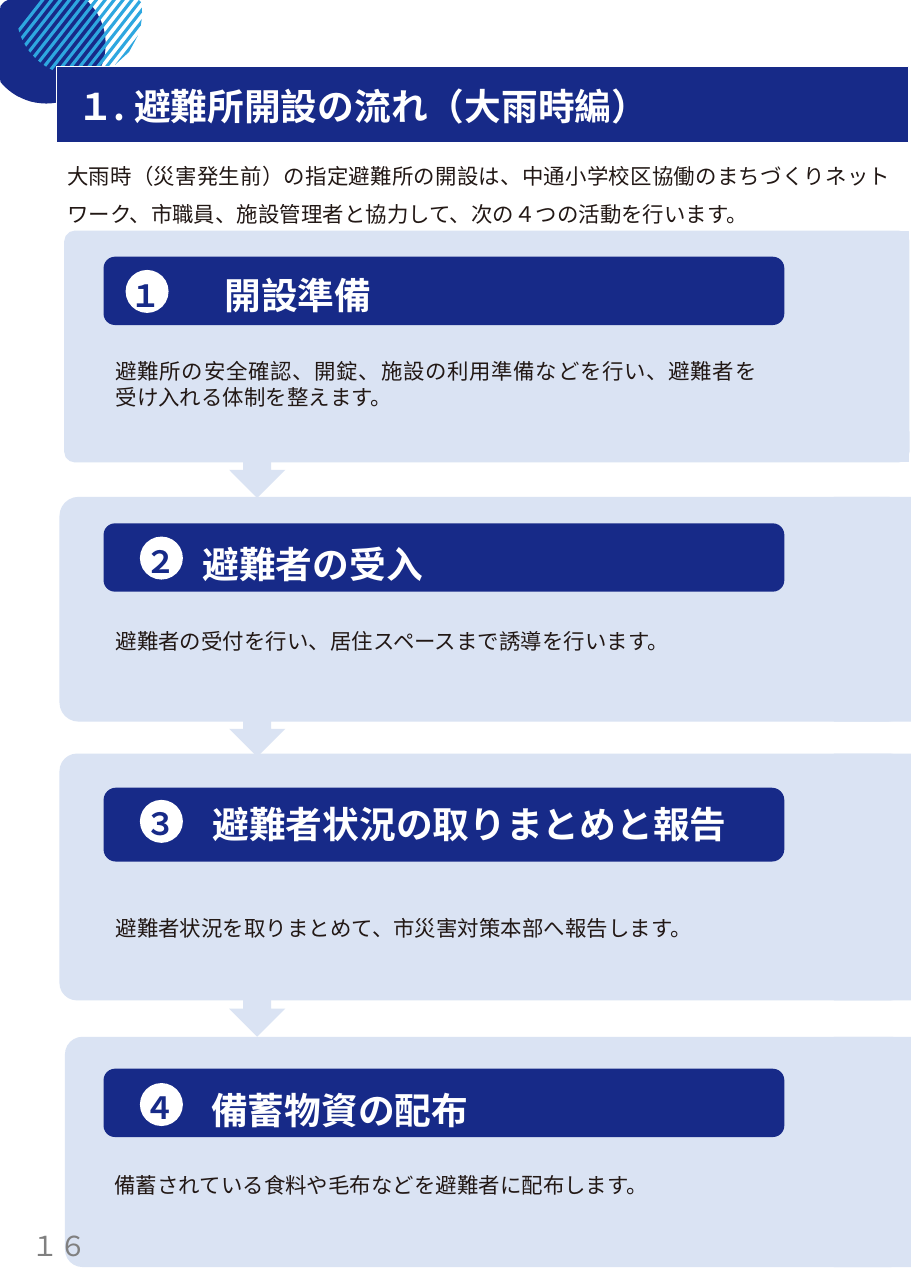
from math import cos, pi, sin, sqrt

from lxml.etree import SubElement
from pptx import Presentation
from pptx.dml.color import RGBColor
from pptx.enum.shapes import MSO_SHAPE as Form
from pptx.enum.text import PP_ALIGN as Align
from pptx.oxml.ns import qn
from pptx.util import Inches, Pt

COLORS = {"navy": "172A88", "pale": "DAE3F3", "sky": "2EA7E0",
          "white": "FFFFFF", "ink": "221815", "gray": "808080"}
SANS = "Noto Sans CJK JP"
SERIF = "Cambria"
UNITS = 1000  # freeform units per inch

# panel: left, top, width, height, corner; bar: top, height;
# badge: left, top; digit: left, top; head: left, top, width;
# body: left, top, width, height
STEPS = [
    dict(panel=(0.59, 2.1, 7.66, 2.09, 0.043), bar=(2.33, 0.62),
         badge=(1.14, 2.45), digit=(1.09, 2.46, "１"),
         head=(1.94, 2.43, 1.92, "開設準備"),
         body=(0.97, 3.24, 5.9, 0.49,
               "避難所の安全確認、開錠、施設の利用準備などを行い、"
               "避難者を受け入れる体制を整えます。")),
    dict(panel=(0.54, 4.51, 7.7, 2.04, 0.085), bar=(4.75, 0.62),
         badge=(1.27, 4.87), digit=(1.22, 4.88, "２"),
         head=(1.74, 4.87, 2.28, "避難者の受入"),
         body=(0.97, 5.69, 5.77, 0.25,
               "避難者の受付を行い、居住スペースまで誘導を行います。")),
    dict(panel=(0.54, 6.84, 7.7, 2.24, 0.071), bar=(7.15, 0.67),
         badge=(1.27, 7.26), digit=(1.22, 7.26, "３"),
         head=(1.83, 7.35, 4.91, "避難者状況の取りまとめと報告"), lead=Pt(20),
         body=(0.97, 8.3, 5.9, 0.25,
               "避難者状況を取りまとめて、市災害対策本部へ報告します。")),
    dict(panel=(0.59, 9.41, 7.66, 2.09, 0.076), bar=(9.7, 0.62),
         badge=(1.27, 9.83), digit=(1.21, 9.83, "４"),
         head=(1.82, 9.82, 3.07, "備蓄物資の配布"),
         body=(0.96, 10.63, 5.43, 0.25,
               "備蓄されている食料や毛布などを避難者に配布します。")),
]
ARROWS = [3.85, 6.2, 8.74]
INTRO = ("大雨時（災害発生前）の指定避難所の開設は、中通小学校区協働の"
         "まちづくりネットワーク、市職員、施設管理者と協力して、"
         "次の４つの活動を行います。")


def color(name):
    return RGBColor.from_string(COLORS[name])


class Page:
    """Draws styled elements on one slide."""

    def __init__(self, slide):
        self.shapes = slide.shapes

    def paint(self, shape, fill, line=None, width=1):
        shape.shadow.inherit = False
        shape.fill.solid()
        shape.fill.fore_color.rgb = color(fill)
        if line:
            shape.line.color.rgb = color(line)
            shape.line.width = Pt(width)
        else:
            shape.line.fill.background()

    def shape(self, form, box, fill, corner=None, line=None, width=1):
        item = self.shapes.add_shape(form, *map(Inches, box))
        if corner is not None:
            item.adjustments[0] = corner
        self.paint(item, fill, line, width)

    def outline(self, loops, fill):
        """Joins closed loops of inch points into one freeform."""
        loops = [[(x * UNITS, y * UNITS) for x, y in loop] for loop in loops]
        pen = self.shapes.build_freeform(*loops[0][0], scale=Inches(1) / UNITS)
        for num, loop in enumerate(loops):
            if num:
                pen.move_to(*loop[0])
            pen.add_line_segments(loop[1:], close=True)
        self.paint(pen.convert_to_shape(), fill)

    def text(self, box, words, size, tint, font=SANS, bold=False,
             align=Align.JUSTIFY, lead=None, tight=False, indent=0):
        frame = self.shapes.add_textbox(*map(Inches, box)).text_frame
        frame.word_wrap = True
        if tight:
            frame.margin_left = frame.margin_right = frame.margin_bottom = 0
            frame.margin_top = Inches(0.01)
        para = frame.paragraphs[0]
        para.alignment = align
        if lead:
            para.line_spacing = lead
        if indent:
            para._p.get_or_add_pPr().set("marL", str(Inches(indent)))
        run = para.add_run()
        run.text = words
        run.font.size = Pt(size)
        run.font.bold = bold
        run.font.name = font
        run.font.color.rgb = color(tint)
        SubElement(run._r.get_or_add_rPr(), qn("a:ea")).set("typeface", SANS)

    def body(self, box, words, lead=None):
        self.text(box, words, 14, "ink", lead=lead, tight=True, indent=0.08)

    def step(self, panel, bar, badge, digit, head, body, lead=None):
        left, top, wide, high, corner = panel
        first = top < 3
        edge = "pale" if first else None
        self.shape(Form.ROUNDED_RECTANGLE, (left, top, wide, high), "pale",
                   corner, edge)
        # square off the right-hand corners
        side = 7.55 if first else 7.57
        self.shape(Form.RECTANGLE, (side, top, 0.7, high), "pale", line=edge)
        self.shape(Form.ROUNDED_RECTANGLE, (0.94, bar[0], 6.18, bar[1]), "navy")
        self.text((*head[:3], 0.5), head[3], 24, "white", SERIF, True, lead=lead)
        self.shape(Form.OVAL, (*badge, 0.39, 0.39), "white")
        self.text((*digit[:2], 0.55, 0.44), digit[2], 20, "navy", SERIF, True)

    def disc(self, mid_x, mid_y, rad):
        """Circle cut off at the top and left slide edges."""
        turns = [2 * pi * i / 72 for i in range(72)]
        self.outline([[(max(0, mid_x + rad * cos(t)), max(0, mid_y + rad * sin(t)))
                       for t in turns]], "navy")

    def hatch(self, mid_x, mid_y, rad, count=15, start=0.37, gap=0.081,
              band=0.036, lean=0.78):
        """Slanted bands inside a circle cut off at the top slide edge."""
        def ends(foot):
            off = foot - mid_x
            a = 1 + lean ** 2
            b = lean * off + mid_y
            root = sqrt(max(0, b * b - a * (off ** 2 + mid_y ** 2 - rad ** 2)))
            return [(foot - lean * y, y)
                    for y in (max(0, (b - root) / a), (b + root) / a)]

        feet = [start + gap * i for i in range(count)]
        self.outline([ends(f) + ends(f + band)[::-1] for f in feet], "sky")


def main():
    deck = Presentation()
    deck.slide_width, deck.slide_height = Inches(8.27), Inches(11.69)
    page = Page(deck.slides.add_slide(deck.slide_layouts[6]))

    for step in STEPS:
        page.step(**step)
    for top in ARROWS:
        page.shape(Form.DOWN_ARROW, (2.08, top, 0.51, 0.67), "pale")
    for step in STEPS:
        *box, words = step["body"]
        page.body(box, words)

    page.disc(0.42, 0.4, 0.54)
    page.hatch(0.72, 0.12, 0.57)
    page.shape(Form.RECTANGLE, (0.51, 0.6, 7.74, 0.69), "navy",
               line="white", width=0.75)
    page.text((0.69, 0.75, 7.58, 0.42), "１. 避難所開設の流れ（大雨時編）", 24,
              "white", bold=True, align=Align.LEFT, tight=True, indent=0.01)
    page.body((0.53, 1.35, 7.56, 0.69), INTRO, lead=1.5)
    page.text((0.15, 11.11, 0.78, 0.4), "１６", 18, "gray", "Arial",
              align=Align.CENTER)
    deck.save("out.pptx")


if __name__ == "__main__":
    main()
